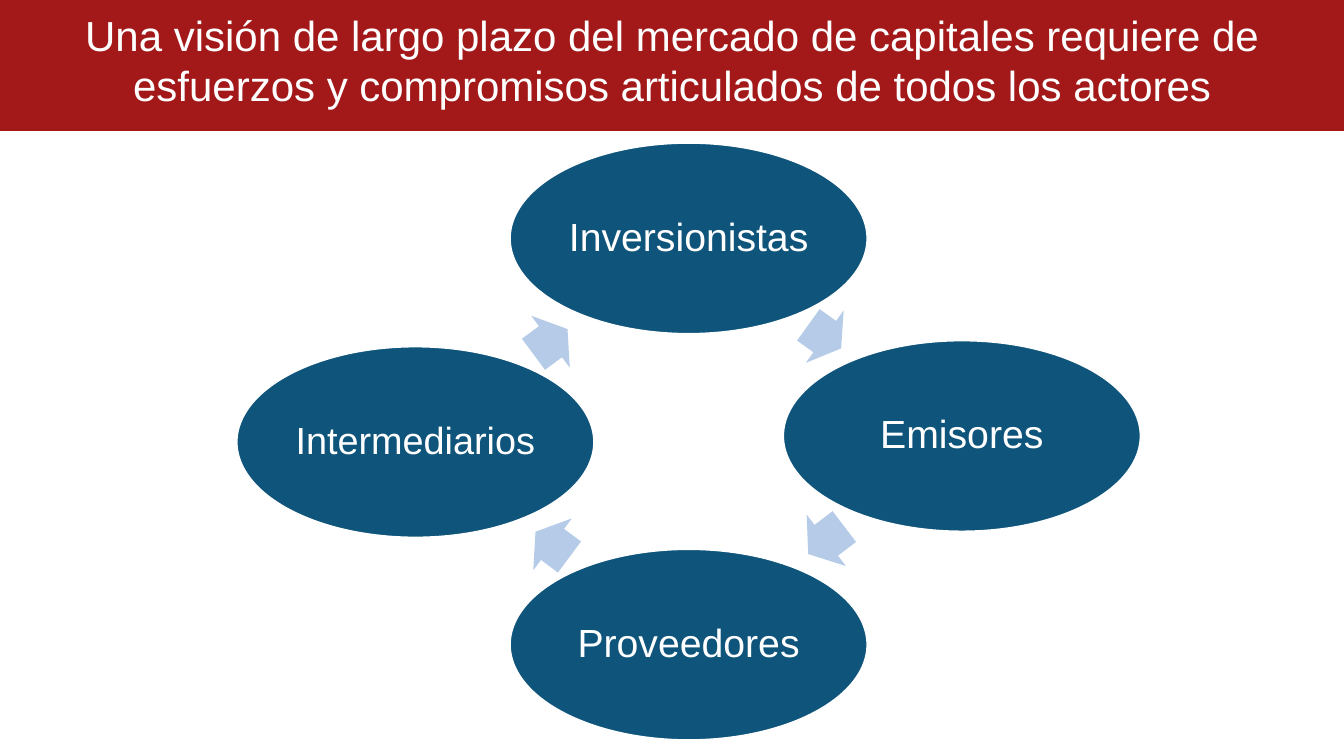
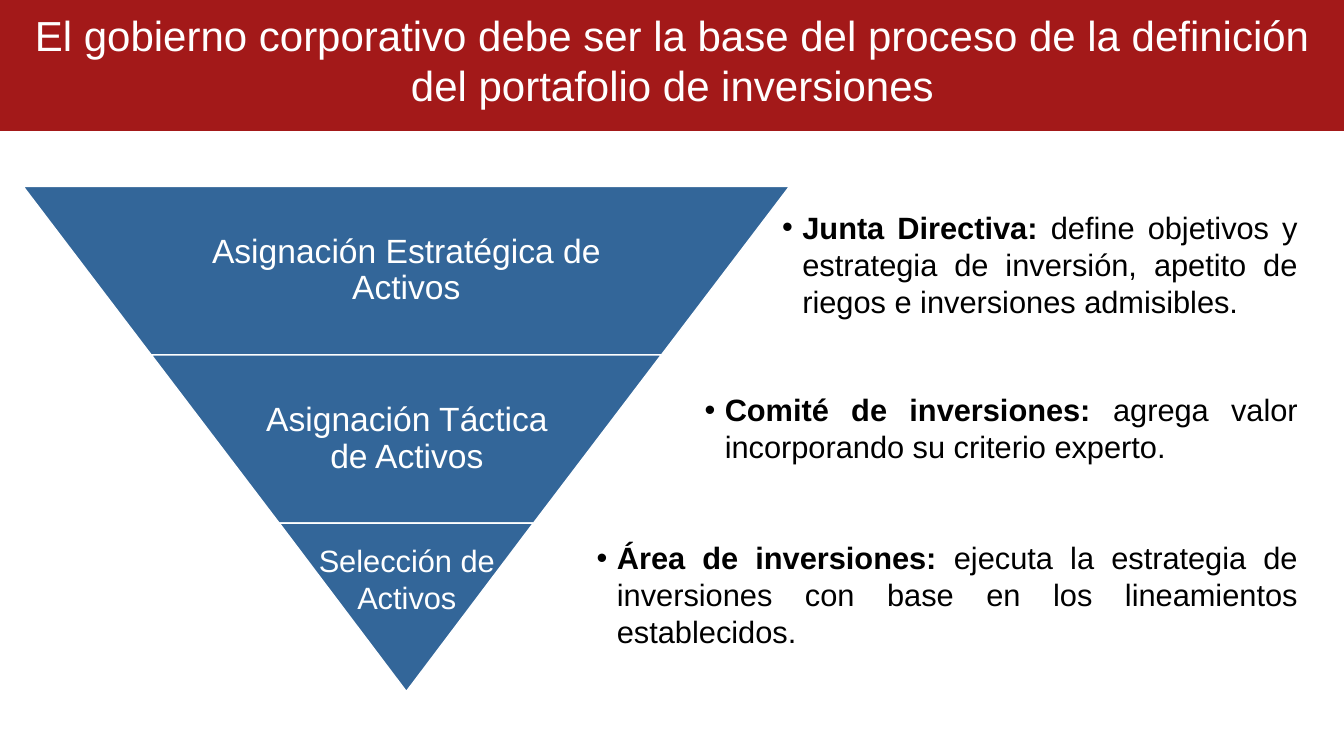
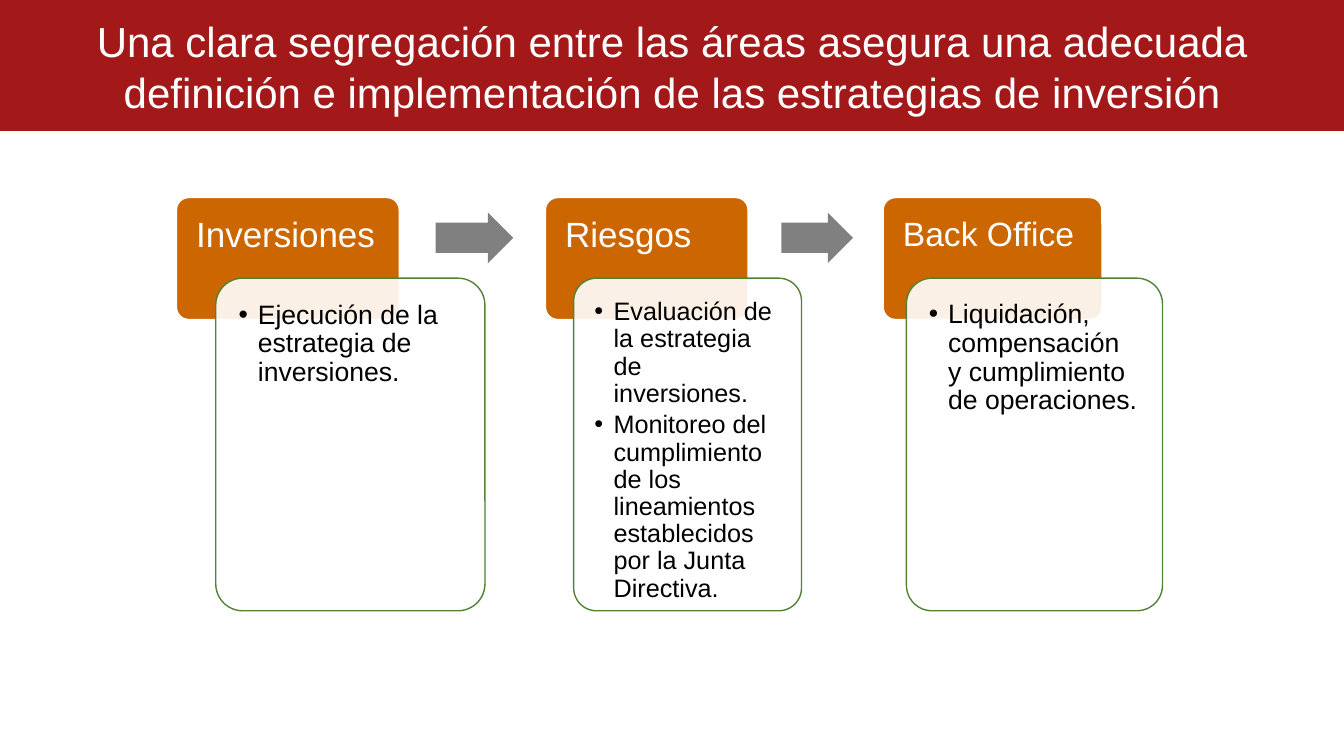
"""Build three slides on capital markets, portfolio governance and separation of duties."""
from lxml.etree import SubElement
from pptx import Presentation
from pptx.dml.color import RGBColor
from pptx.enum.shapes import MSO_SHAPE as SHAPE
from pptx.enum.text import MSO_ANCHOR as ANCHOR, PP_ALIGN as ALIGN
from pptx.oxml.ns import qn
from pptx.util import Pt

PX = 9144
WHITE, BLACK, RED = "FFFFFF", "000000", "A31919"
NAVY, PALE, BLUE = "0F547B", "B5CBE7", "336699"
ORANGE, GREEN, GRAY = "CC6600", "548235", "808080"
rgb = RGBColor.from_string


def draw(s, kind, x, y, w, h, fill, line=None, adj=(), rot=0):
    """Add a filled preset shape, measured in px."""
    sp = s.shapes.add_shape(kind, x * PX, y * PX, w * PX, h * PX)
    sp.shadow.inherit = False
    sp.fill.solid()
    sp.fill.fore_color.rgb = rgb(fill)
    if line:
        sp.line.color.rgb = rgb(line)
        sp.line.width = Pt(1)
    else:
        sp.line.fill.background()
    for i, value in enumerate(adj):
        sp.adjustments[i] = value
    sp.rotation = rot
    return sp


def write(sp, paras, size, color=WHITE, align=ALIGN.CENTER, anchor=ANCHOR.MIDDLE,
          inset=(10, 5, 10, 5), spacing=1.0, after=0, indent=0):
    """Fill a shape with paragraphs, each a tuple of runs; a leading run is bold."""
    tf = sp.text_frame
    tf.word_wrap = True
    tf.vertical_anchor = anchor
    tf.margin_left, tf.margin_top, tf.margin_right, tf.margin_bottom = [v * PX for v in inset]
    for i, runs in enumerate(paras):
        p = tf.add_paragraph() if i else tf.paragraphs[0]
        if indent:
            pPr = p._p.get_or_add_pPr()
            pPr.set("marL", str(indent * PX))
            pPr.set("indent", str(-indent * PX))
            SubElement(pPr, qn("a:buFont"), typeface="Arial")
            SubElement(pPr, qn("a:buChar"), char="•")
        p.alignment = align
        p.line_spacing = spacing
        p.space_after = Pt(after)
        for j, text in enumerate(runs):
            r = p.add_run()
            r.text = text
            r.font.name = "Arial"
            r.font.size = Pt(size)
            r.font.bold = j < len(runs) - 1
            r.font.color.rgb = rgb(color)


prs = Presentation()
prs.slide_width, prs.slide_height = 1333 * PX, 750 * PX

titles = [
    (25, "Una visión de largo plazo del mercado de capitales requiere de esfuerzos y "
         "compromisos articulados de todos los actores"),
    (25, "El gobierno corporativo debe ser la base del proceso de la definición del "
         "portafolio de inversiones"),
    (31, "Una clara segregación entre las áreas asegura una adecuada definición e "
         "implementación de las estrategias de inversión"),
]
for y, title in titles:
    s = prs.slides.add_slide(prs.slide_layouts[6])
    draw(s, SHAPE.RECTANGLE, 0, 0, 1333, 130, RED)
    tb = s.shapes.add_textbox(15 * PX, y * PX, 1304 * PX, 69 * PX)
    write(tb, [(title,)], 30)
cycle, pyramid, process = prs.slides

actors = [
    ("Inversionistas", 506, 142, 28, (798, 302, 40, 64, 35.8)),
    ("Emisores", 777, 338, 28, (797, 504, 45, 64, 142.7)),
    ("Proveedores", 506, 545, 28, (527, 508, 42, 64, 216.6)),
    ("Intermediarios", 235, 344, 27, (525, 307, 42, 64, 323.4)),
]
for name, x, y, size, (ax, ay, aw, ah, rot) in actors:
    sp = draw(cycle, SHAPE.OVAL, x, y, 354, 189, NAVY, WHITE)
    write(sp, [(name,)], size, inset=(4, 4, 4, 4), spacing=0.9)
    draw(cycle, SHAPE.RIGHT_ARROW, ax, ay, aw, ah, PALE, adj=(0.6, 0.5), rot=rot)

for i in range(3):
    draw(pyramid, SHAPE.TRAPEZOID, 23 + 127 * i, 185 + 167 * i, 760 - 254 * i, 167,
         BLUE, WHITE, adj=(0.76,), rot=180)
levels = [("Asignación Estratégica de Activos", 156, 494),
          ("Asignación Táctica de Activos", 239, 329)]
for i, (name, x, w) in enumerate(levels):
    tb = pyramid.shapes.add_textbox(x * PX, (185 + 167 * i) * PX, w * PX, 167 * PX)
    write(tb, [(name,)], 24, inset=(3, 3, 3, 3), spacing=0.9)
tb = pyramid.shapes.add_textbox(305 * PX, 533 * PX, 197 * PX, 84 * PX)
write(tb, [("Selección de",), ("Activos",)], 22, anchor=ANCHOR.TOP)
tb.text_frame.word_wrap = False

duties = [
    (766, 202, 121, "Junta Directiva: ",
     "define objetivos y estrategia de inversión, apetito de riegos e inversiones admisibles."),
    (689, 383, 84, "Comité de inversiones: ",
     "agrega valor incorporando su criterio experto."),
    (582, 530, 121, "Área de inversiones: ",
     "ejecuta la estrategia de inversiones con base en los lineamientos establecidos."),
]
for x, y, h, lead, duty in duties:
    tb = pyramid.shapes.add_textbox(x * PX, y * PX, (1297 - x) * PX, h * PX)
    write(tb, [(lead, duty)], 22, BLACK, ALIGN.JUSTIFY, ANCHOR.TOP, indent=20)

areas = [
    ("Inversiones", 25, 175, 221, 214, 267, 19, 15,
     [("Ejecución de la estrategia de inversiones.",)]),
    ("Riesgos", 25, 541, 201, 569, 226, 18, 14,
     [("Evaluación de la estrategia de inversiones.",),
      ("Monitoreo del cumplimiento de los lineamientos establecidos por la Junta Directiva.",)]),
    ("Back Office", 24, 876, 217, 899, 254, 19, 15,
     [("Liquidación, compensación y cumplimiento de operaciones.",)]),
]
for name, size, x, w, card_x, card_w, card_size, pad, tasks in areas:
    sp = draw(process, SHAPE.ROUNDED_RECTANGLE, x, 196, w, 121, ORANGE, WHITE, (0.1,))
    write(sp, [(name,)], size, align=ALIGN.LEFT, anchor=ANCHOR.TOP,
          inset=(16, 16, 16, 10), spacing=0.9)
    sp = draw(process, SHAPE.ROUNDED_RECTANGLE, card_x, 276, card_w, 330, WHITE, GREEN, (0.1,))
    color = sp._element.spPr.find(qn("a:solidFill"))[0]
    SubElement(color, qn("a:alpha"), val="90000")
    write(sp, tasks, card_size, BLACK, ALIGN.LEFT, ANCHOR.TOP, (pad,) * 4, 0.9, 3, 19)
for x, w in [(432, 77), (775, 71)]:
    draw(process, SHAPE.RIGHT_ARROW, x, 211, w, 50, GRAY, adj=(0.6, 0.5))

prs.save("out.pptx")
